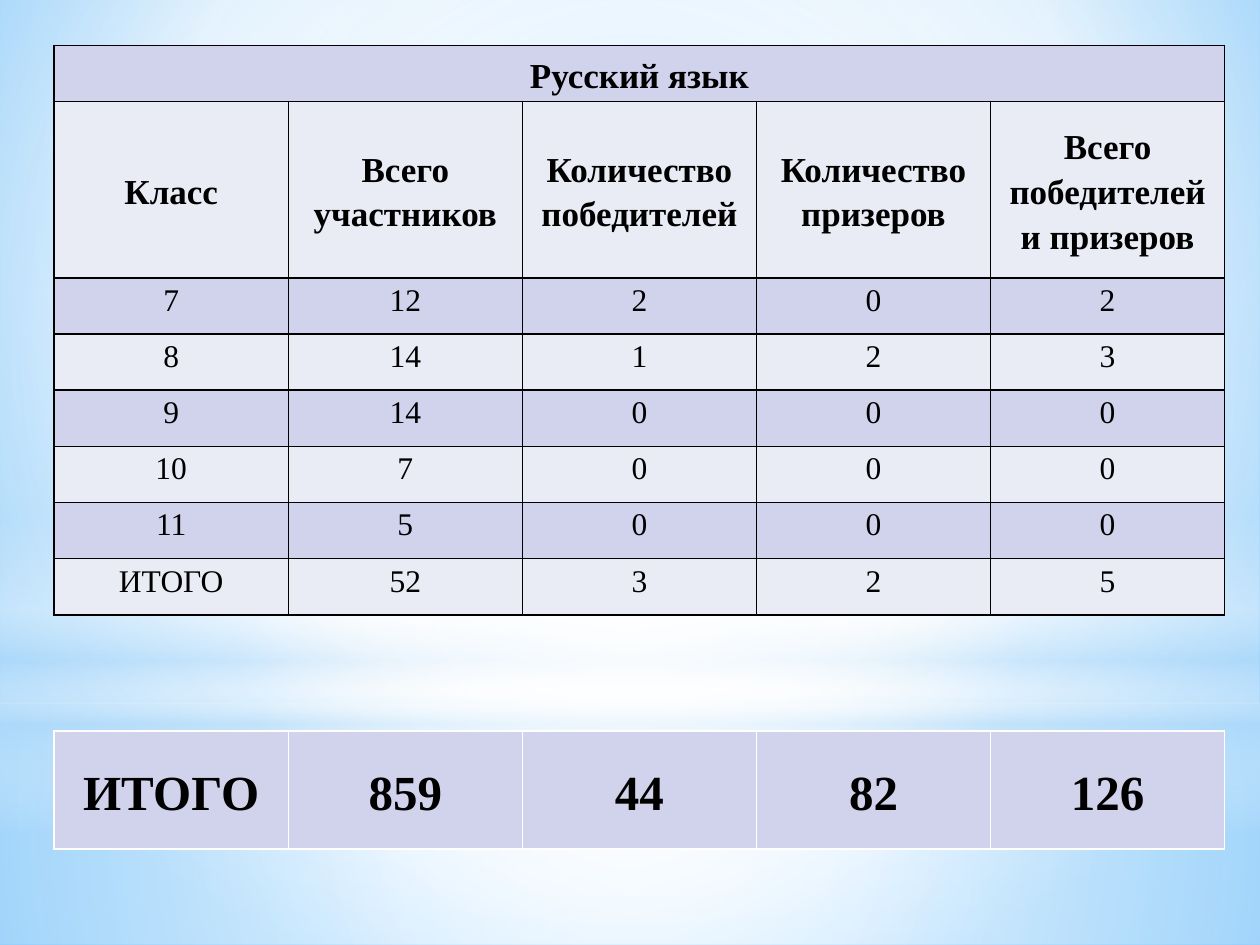
from lxml import etree
from pptx import Presentation
from pptx.dml.color import RGBColor
from pptx.enum.shapes import MSO_SHAPE
from pptx.enum.text import MSO_ANCHOR, PP_ALIGN
from pptx.oxml.ns import qn
from pptx.util import Inches, Pt

RECTANGLE, OVAL = MSO_SHAPE.RECTANGLE, MSO_SHAPE.OVAL
MIDDLE, TOP = MSO_ANCHOR.MIDDLE, MSO_ANCHOR.TOP
CENTER = PP_ALIGN.CENTER

BLACK = RGBColor(0x00, 0x00, 0x00)
WHITE = RGBColor(0xFF, 0xFF, 0xFF)
LAVENDER = RGBColor(0xD0, 0xD3, 0xEB)
PALE = RGBColor(0xE9, 0xEB, 0xF5)
MIST = RGBColor(0xB4, 0xDC, 0xFA)
SKY = RGBColor(0x9E, 0xD5, 0xFF)
AZURE = RGBColor(0x5B, 0xB9, 0xFF)
FONT = "Times New Roman"

# Content
SUBJECT_ROWS = [
    ["Русский язык", "", "", "", ""],
    ["Класс", "Всего участников", "Количество победителей",
     "Количество призеров", "Всего победителей и призеров"],
    ["7", "12", "2", "0", "2"],
    ["8", "14", "1", "2", "3"],
    ["9", "14", "0", "0", "0"],
    ["10", "7", "0", "0", "0"],
    ["11", "5", "0", "0", "0"],
    ["ИТОГО", "52", "3", "2", "5"],
]
TOTAL_ROWS = [["ИТОГО", "859", "44", "82", "126"]]

# Gradient stops: position, colour, opacity (all in percent)
BACKGROUND_STOPS = [(0, SKY, 100), (60, WHITE, 100), (100, AZURE, 100)]
BACKGROUND_FOCUS = (20, 10, 20, 60)
CENTRE_FOCUS = (50, 50, 50, 50)
# Light layers: preset, top, height, stops, focus (None means top to bottom)
LAYERS = [
    (RECTANGLE, 5.58, 1.92,
     [(0, WHITE, 91), (37, WHITE, 76), (100, MIST, 79)], CENTRE_FOCUS),
    (RECTANGLE, 0, 5.58,
     [(0, WHITE, 89), (48, WHITE, 62), (100, MIST, 79)], CENTRE_FOCUS),
    (RECTANGLE, 4.12, 2.5,
     [(0, WHITE, 0), (29, WHITE, 30), (45, MIST, 40), (55, WHITE, 26),
      (65, MIST, 60), (100, WHITE, 0)], None),
    (OVAL, 1.75, 5.58, [(0, WHITE, 100), (56, WHITE, 0)], CENTRE_FOCUS),
]

PAGE_WIDTH, PAGE_HEIGHT = 10, 7.5
TABLE_LEFT, TABLE_WIDTH = 0.43, 9.29
SUBJECT_TOP, SUBJECT_HEIGHT, HEADER_HEIGHT = 0.36, 4.52, 1.4
TOTAL_TOP, TOTAL_HEIGHT = 5.8, 0.94


def add_child(parent, tag, **attributes):
    child = etree.SubElement(parent, qn(tag))
    for name, value in attributes.items():
        child.set(name, str(value))
    return child


def set_gradient(fill, properties, stops, focus):
    fill.gradient()
    gradient = properties.find(qn("a:gradFill"))
    for child in list(gradient):
        gradient.remove(child)
    stop_list = add_child(gradient, "a:gsLst")
    for position, colour, opacity in stops:
        stop = add_child(stop_list, "a:gs", pos=position * 1000)
        shade = add_child(stop, "a:srgbClr", val=colour)
        if opacity < 100:
            add_child(shade, "a:alpha", val=opacity * 1000)
    if focus:
        circle = add_child(gradient, "a:path", path="circle")
        sides = {side: share * 1000 for side, share in zip("ltrb", focus)}
        add_child(circle, "a:fillToRect", **sides)
    else:
        add_child(gradient, "a:lin", ang=90 * 60000, scaled=0)


def set_borders(cell, colour):
    properties = cell._tc.get_or_add_tcPr()
    for index, side in enumerate(("a:lnL", "a:lnR", "a:lnT", "a:lnB")):
        line = etree.Element(qn(side), w=str(Pt(1)))
        solid = add_child(line, "a:solidFill")
        add_child(solid, "a:srgbClr", val=colour)
        properties.insert(index, line)


def format_cell(cell, text, size, bold, fill, border):
    cell.fill.solid()
    cell.fill.fore_color.rgb = fill
    cell.vertical_anchor = MIDDLE if bold else TOP
    cell.margin_left = cell.margin_right = Inches(0.07 if bold else 0.08)
    cell.margin_top = cell.margin_bottom = 0
    set_borders(cell, border)
    if not text:
        return
    para = cell.text_frame.paragraphs[0]
    para.alignment = CENTER
    para.line_spacing = 1.15
    para.space_after = Pt(10 if bold else 0)
    span = para.add_run()
    span.text = text
    span.font.name = FONT
    span.font.size = Pt(size)
    span.font.bold = bold
    span.font.color.rgb = BLACK


def add_result_table(page, rows, top, heights, heading_rows, heading_size, border):
    columns = len(rows[0])
    table = page.shapes.add_table(
        len(rows), columns, Inches(TABLE_LEFT), Inches(top),
        Inches(TABLE_WIDTH), Inches(sum(heights))).table
    for column in table.columns:
        column.width = Inches(TABLE_WIDTH / columns)
    for index, (values, height) in enumerate(zip(rows, heights)):
        table.rows[index].height = Inches(height)
        bold = index < heading_rows
        fill = PALE if index % 2 else LAVENDER
        for cell, text in zip(table.rows[index].cells, values):
            format_cell(cell, text, heading_size if bold else 18, bold, fill, border)
    return table


def main():
    deck = Presentation()
    deck.slide_width, deck.slide_height = Inches(PAGE_WIDTH), Inches(PAGE_HEIGHT)
    page = deck.slides.add_slide(deck.slide_layouts[6])

    # Background and light layers
    page_fill = page.background.fill
    page_fill.solid()
    page_properties = page._element.find(".//" + qn("p:bgPr"))
    set_gradient(page_fill, page_properties, BACKGROUND_STOPS, BACKGROUND_FOCUS)
    for preset, top, height, stops, focus in LAYERS:
        layer = page.shapes.add_shape(
            preset, 0, Inches(top), Inches(PAGE_WIDTH), Inches(height))
        layer.shadow.inherit = False
        layer.line.fill.background()
        set_gradient(layer.fill, layer._element.spPr, stops, focus)

    # Results by class
    row_height = (SUBJECT_HEIGHT - HEADER_HEIGHT) / (len(SUBJECT_ROWS) - 1)
    heights = [row_height] * len(SUBJECT_ROWS)
    heights[1] = HEADER_HEIGHT
    subject = add_result_table(
        page, SUBJECT_ROWS, SUBJECT_TOP, heights, 2, 20, BLACK)
    subject.cell(0, 0).merge(subject.cell(0, len(subject.columns) - 1))

    # Grand total
    add_result_table(page, TOTAL_ROWS, TOTAL_TOP, [TOTAL_HEIGHT], 1, 28, WHITE)

    deck.save("out.pptx")


if __name__ == "__main__":
    main()
